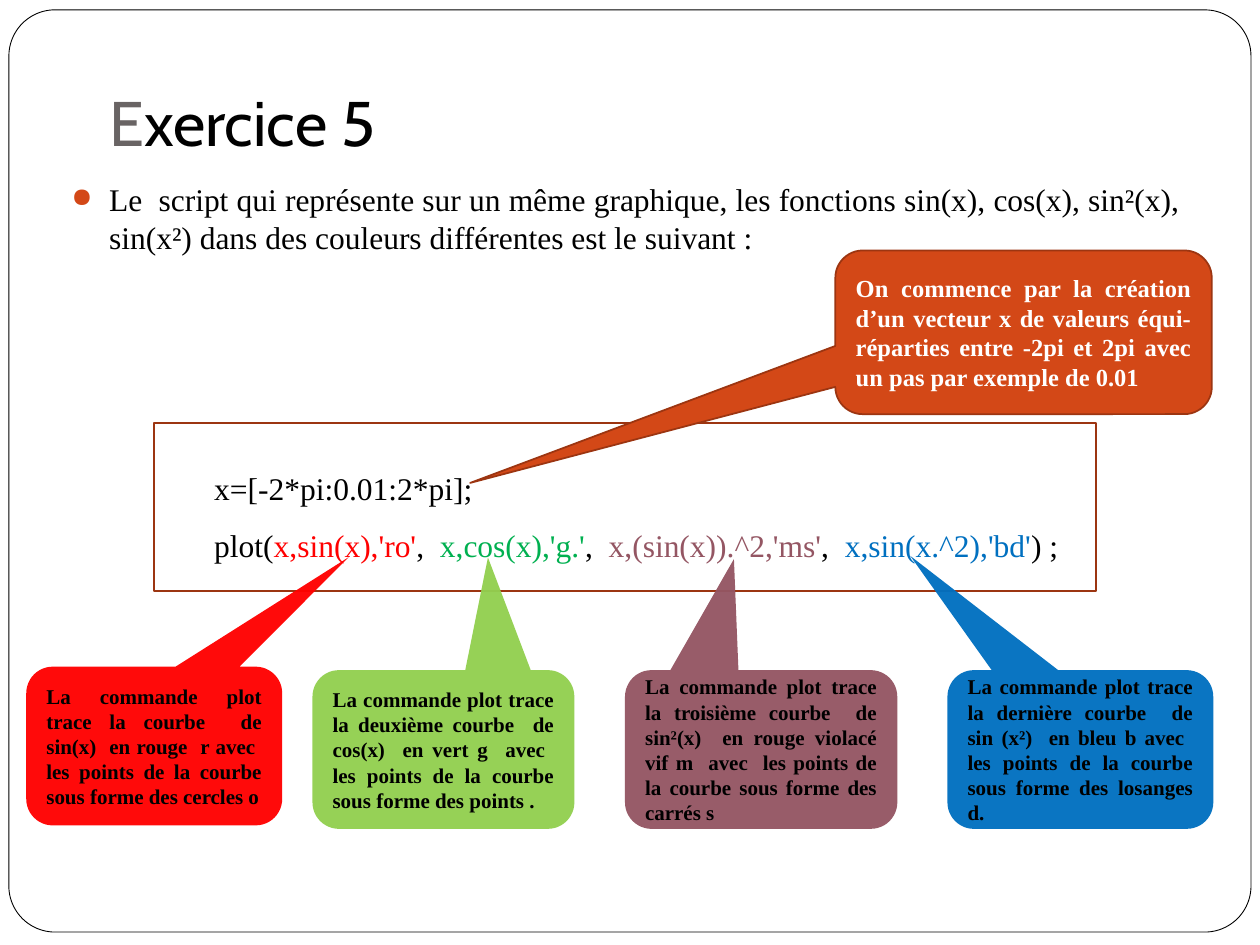
"""Build the "Exercice 5" slide: a plotting script explained by callouts."""
from lxml import etree
from pptx import Presentation
from pptx.dml.color import RGBColor
from pptx.enum.shapes import MSO_SHAPE
from pptx.enum.text import MSO_ANCHOR, PP_ALIGN
from pptx.oxml.ns import qn
from pptx.util import Cm, Pt

ROUNDED, RECTANGLE = MSO_SHAPE.ROUNDED_RECTANGLE, MSO_SHAPE.RECTANGLE
CALLOUT = MSO_SHAPE.ROUNDED_RECTANGULAR_CALLOUT
TOP, MIDDLE, BOTTOM = MSO_ANCHOR.TOP, MSO_ANCHOR.MIDDLE, MSO_ANCHOR.BOTTOM
LEFT, JUSTIFY = PP_ALIGN.LEFT, PP_ALIGN.JUSTIFY
SERIF, SANS = "Times New Roman", "Cabin"

COLORS = {
    "black": "000000", "white": "FFFFFF", "gray": "696464",
    "orange": "D34817", "rust": "9C3511", "red": "FF0000",
    "code green": "00B050", "green": "92D050",
    "purple": "945663", "blue": "0070C0",
}

TITLE = [[("E", "gray"), ("xercice 5", "black")]]
INTRO = [[(
    "Le  script qui représente sur un même graphique, les fonctions sin(x), cos(x), "
    "sin²(x), sin(x²) dans des couleurs différentes est le suivant :", "black")]]
CODE = [
    [("x=[-2*pi:0.01:2*pi];", "black")],
    [("plot(", "black"), ("x,sin(x),'ro'", "red"), (",  ", "black"),
     ("x,cos(x),'g.'", "code green"), (",  ", "black"),
     ("x,(sin(x)).^2,'ms'", "purple"), (",  ", "black"),
     ("x,sin(x.^2),'bd'", "blue"), (") ;", "black")],
]
VECTOR_NOTE = (
    "On commence par la création d’un vecteur x de valeurs équi-réparties "
    "entre -2pi et 2pi avec un pas par exemple de 0.01")
CURVE_NOTES = [
    ("red", 0.53, 13.44, 5.16, (0.76, -1.19),
     "La commande plot trace la courbe  de sin(x)  en rouge  r avec  "
     "les points de la courbe sous forme des cercles o"),
    ("green", 6.3, 13.51, 5.28, (0.17, -1.21),
     "La commande plot trace la deuxième courbe  de cos(x)  en vert g  avec  "
     "les points de la courbe sous forme des points ."),
    ("purple", 12.6, 13.51, 5.49, (-0.1, -1.2),
     "La commande plot trace la troisième courbe  de sin²(x)  en rouge violacé vif m  "
     "avec  les points de la courbe sous forme des carrés s"),
    ("blue", 19.1, 13.51, 5.36, (-0.64, -1.22),
     "La commande plot trace la dernière courbe  de sin (x²)  en bleu b avec  "
     "les points de la courbe sous forme des losanges d."),
]
NOTE_HEIGHT = 3.2
CORNER = 0.167


def rgb(color):
    return RGBColor.from_string(COLORS[color])


def add_outline(slide, preset, box, fill=None, line=None, width=1, adjust=()):
    shape = slide.shapes.add_shape(preset, *map(Cm, box))
    shape.shadow.inherit = False
    for index, value in enumerate(adjust):
        shape.adjustments[index] = value
    if fill:
        shape.fill.solid()
        shape.fill.fore_color.rgb = rgb(fill)
    else:
        shape.fill.background()
    if line:
        shape.line.color.rgb = rgb(line)
        shape.line.width = Pt(width)
    else:
        shape.line.fill.background()
    return shape


def write(shape, lines, size, font=SERIF, bold=False, anchor=MIDDLE, **layout):
    frame = shape.text_frame
    for name, value in {"word_wrap": True, "vertical_anchor": anchor}.items():
        setattr(frame, name, value)
    for number, line in enumerate(lines):
        paragraph = frame.add_paragraph() if number else frame.paragraphs[0]
        for name, value in layout.items():
            setattr(paragraph, name, value)
        for text, color in line:
            run = paragraph.add_run()
            run.text = text
            run.font.color.rgb = rgb(color)
            for name, value in {"size": Pt(size), "name": font, "bold": bold}.items():
                setattr(run.font, name, value)
    return frame


def indent(paragraph, margin, first=0):
    properties = paragraph._p.get_or_add_pPr()
    properties.set("marL", str(Cm(margin)))
    properties.set("indent", str(Cm(first)))
    return properties


def add_bullet(paragraph, color, percent):
    properties = indent(paragraph, 0.76, -0.76)
    bullet_color = etree.SubElement(properties, qn("a:buClr"))
    etree.SubElement(bullet_color, qn("a:srgbClr"), val=COLORS[color])
    etree.SubElement(properties, qn("a:buSzPct"), val=str(percent * 1000))
    etree.SubElement(properties, qn("a:buChar"), char="●")


def add_note(slide, box, fill, text, color, size, tip, line=None):
    note = add_outline(slide, CALLOUT, box, fill, line, adjust=(*tip, CORNER))
    write(note, [[(text, color)]], size, bold=True, alignment=JUSTIFY)
    return note


def set_opacity(shape, percent):
    fill_color = shape.fill._xPr.find(qn("a:solidFill"))[0]
    etree.SubElement(fill_color, qn("a:alpha"), val=str(percent * 1000))


def main():
    deck = Presentation()
    deck.slide_width, deck.slide_height = Cm(25.4), Cm(19.05)
    slide = deck.slides.add_slide(deck.slide_layouts[6])

    add_outline(slide, ROUNDED, (0.18, 0.2, 25.04, 18.59), "white", "black", 0.5, (0.05,))

    title = slide.shapes.add_textbox(*map(Cm, (1.96, 0.28, 21.59, 3.18)))
    write(title, TITLE, 36, SANS, anchor=BOTTOM).margin_bottom = Cm(0.25)

    intro = slide.shapes.add_textbox(*map(Cm, (1.19, 3.51, 22.86, 5.49)))
    intro_frame = write(intro, INTRO, 18, anchor=TOP, alignment=JUSTIFY, space_before=Pt(5.8))
    add_bullet(intro_frame.paragraphs[0], "orange", 85)

    code = add_outline(slide, RECTANGLE, (3.1, 8.53, 19, 3.38), line="rust")
    for paragraph in write(code, CODE, 18, alignment=LEFT, line_spacing=1.5).paragraphs:
        indent(paragraph, 0.97)

    add_note(slide, (16.84, 5.05, 7.59, 3.3), "orange", VECTOR_NOTE, "white", 14,
             (-1.47, 0.92), "rust")
    for fill, left, top, width, tip, text in CURVE_NOTES:
        note = add_note(slide, (left, top, width, NOTE_HEIGHT), fill, text, "black", 12, tip)
        set_opacity(note, 96)

    deck.save("out.pptx")


if __name__ == "__main__":
    main()
